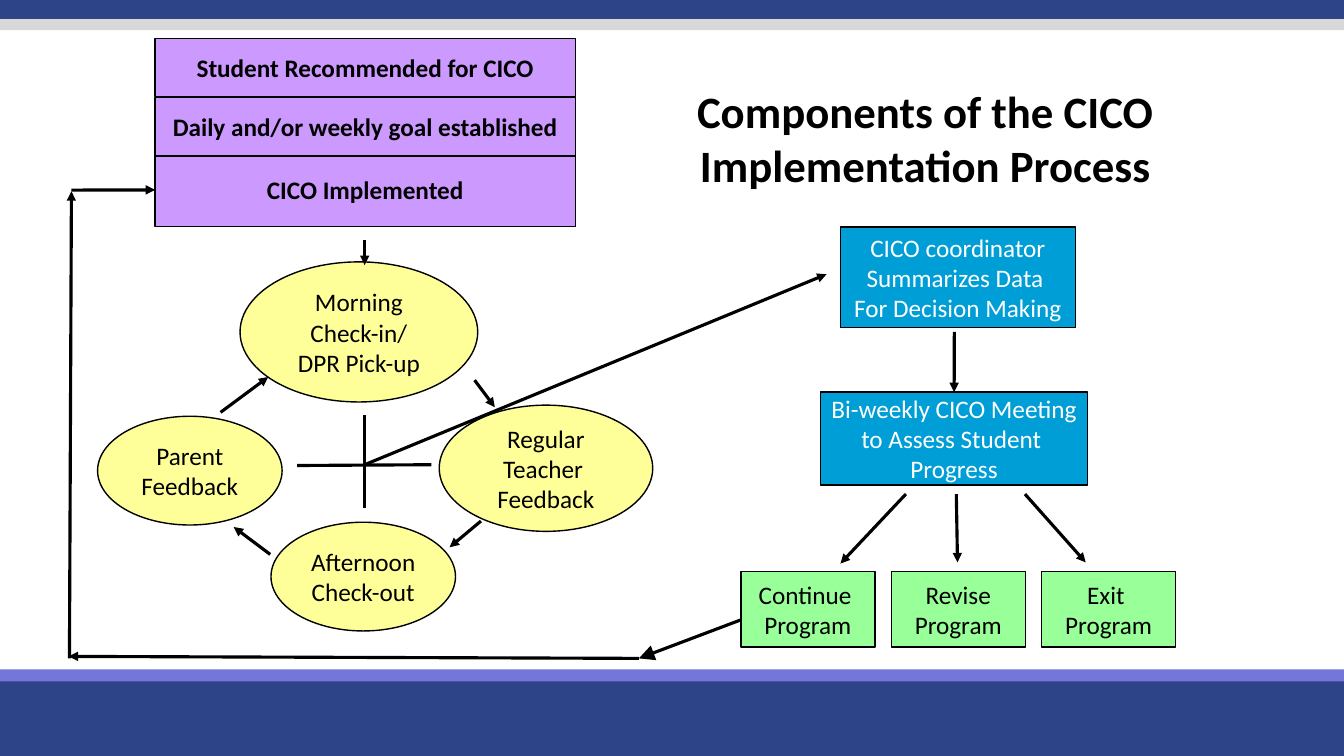
from lxml import etree
from pptx import Presentation, util as u
from pptx.dml.color import RGBColor
from pptx.enum import shapes, text
from pptx.oxml.ns import qn

COLORS = {
    "navy": "2E4488", "violet": "7476DA", "grey": "D8D8D8",
    "purple": "CC99FF", "yellow": "FFFF99", "blue": "009ED6",
    "green": "99FF99", "black": "000000", "white": "FFFFFF",
}
RECTANGLE = shapes.MSO_SHAPE.RECTANGLE
OVAL = shapes.MSO_SHAPE.OVAL
SLIDE_WIDTH, SLIDE_HEIGHT = 33.87, 19.05


def color(name):
    return RGBColor.from_string(COLORS[name])


class FlowSlide:
    body = {"name": "Calibri", "size": u.Pt(18), "bold": False}
    strong = {**body, "bold": True}
    heading = {**strong, "size": u.Pt(32)}

    def __init__(self, presentation):
        self.slide = presentation.slides.add_slide(presentation.slide_layouts[6])

    def label(self, shape, content, style, ink):
        frame = shape.text_frame
        frame.word_wrap = True
        for index, line in enumerate(content.split("\n")):
            paragraph = frame.add_paragraph() if index else frame.paragraphs[0]
            paragraph.text = line
            paragraph.alignment = text.PP_ALIGN.CENTER
            for key, value in style.items():
                setattr(paragraph.font, key, value)
            paragraph.font.color.rgb = color(ink)

    def band(self, top, height, fill):
        shape = self.box(RECTANGLE, (0, top, SLIDE_WIDTH, height), fill)
        shape.line.fill.background()

    def title(self, place, content):
        shape = self.slide.shapes.add_textbox(*map(u.Cm, place))
        self.label(shape, content, self.heading, "black")

    def box(self, kind, place, fill, content="", style=body, ink="black"):
        shape = self.slide.shapes.add_shape(kind, *map(u.Cm, place))
        shape.shadow.inherit = False
        shape.fill.solid()
        shape.fill.fore_color.rgb = color(fill)
        shape.line.color.rgb = color("black")
        shape.line.width = u.Pt(1)
        shape.text_frame.vertical_anchor = text.MSO_ANCHOR.MIDDLE
        if content:
            self.label(shape, content, style, ink)
        return shape

    def line(self, start, end, head="med"):
        connector = self.slide.shapes.add_connector(
            shapes.MSO_CONNECTOR.STRAIGHT, *map(u.Cm, start + end))
        connector.line.color.rgb = color("black")
        connector.line.width = u.Pt(2.25)
        properties = connector._element.spPr
        if head:
            etree.SubElement(properties.find(qn("a:ln")), qn("a:tailEnd"),
                             type="triangle", w=head, len=head)
        etree.SubElement(properties, qn("a:effectLst"))
        return connector


def main():
    presentation = Presentation()
    presentation.slide_width = u.Cm(SLIDE_WIDTH)
    presentation.slide_height = u.Cm(SLIDE_HEIGHT)
    flow = FlowSlide(presentation)

    for top, height, fill in [(17.02, 2.03, "navy"), (16.87, 0.3, "violet"),
                              (0, 0.48, "navy"), (0.48, 0.28, "grey")]:
        flow.band(top, height, fill)
    flow.title((15.98, 1.98, 14.68, 3), "Components of the CICO Implementation Process")

    steps = {}
    for top, height, content in [
        (0.97, 1.47, "Student Recommended for CICO"),
        (3.86, 1.85, "CICO Implemented"),
        (2.46, 1.47, "Daily and/or weekly goal established"),
    ]:
        steps[content] = flow.box(RECTANGLE, (3.91, top, 10.59, height),
                                  "purple", content, flow.strong)

    for place, content in [
        ((2.46, 10.49, 4.65, 2.74), "Parent\nFeedback"),
        ((11.07, 10.21, 5.38, 3.18), "Regular Teacher \nFeedback"),
        ((6.83, 13.16, 4.65, 2.74), "Afternoon\nCheck-out"),
        ((6.05, 6.6, 5.99, 3.53), "Morning Check-in/\nDPR Pick-up"),
    ]:
        flow.box(OVAL, place, "yellow", content)

    flow.box(RECTANGLE, (21.18, 5.72, 5.92, 2.54), "blue",
             "CICO coordinator\nSummarizes Data \nFor Decision Making", ink="white")
    meeting = flow.box(RECTANGLE, (20.68, 9.88, 6.73, 2.34), "blue",
                       "Bi-weekly CICO Meeting\nto Assess Student \nProgress", ink="white")

    for column, decision in enumerate(["Continue ", "Revise", "Exit "]):
        flow.box(RECTANGLE, (18.67 + 3.79 * column, 14.4, 3.38, 1.91),
                 "green", decision + "\nProgram")

    for start, end in [
        ((9.19, 6.05), (9.19, 6.68)),
        ((11.96, 9.58), (12.47, 10.26)),
        ((12.12, 13.13), (11.33, 13.79)),
        ((6.81, 13.97), (5.89, 13.28)),
        ((5.56, 10.39), (6.76, 9.5)),
        ((9.19, 11.71), (20.83, 6.91)),
        ((22.83, 12.45), (21.18, 14.2)),
        ((24.1, 12.45), (24.13, 14.17)),
        ((25.83, 12.45), (27.36, 14.17)),
        ((16.1, 16.59), (1.73, 16.54)),
        ((1.75, 16.59), (1.8, 4.82)),
    ]:
        flow.line(start, end)
    flow.line((18.67, 15.62), (16.1, 16.59), head="lg")
    flow.line((9.19, 10.46), (9.19, 12.8), head=None)
    flow.line((10.87, 11.71), (7.49, 11.73), head=None)

    flow.line((24.05, 8.36), (24.05, 9.88)).end_connect(meeting, 0)
    flow.line((1.8, 4.79), (3.91, 4.79)).end_connect(steps["CICO Implemented"], 1)

    presentation.save("out.pptx")


if __name__ == "__main__":
    main()
